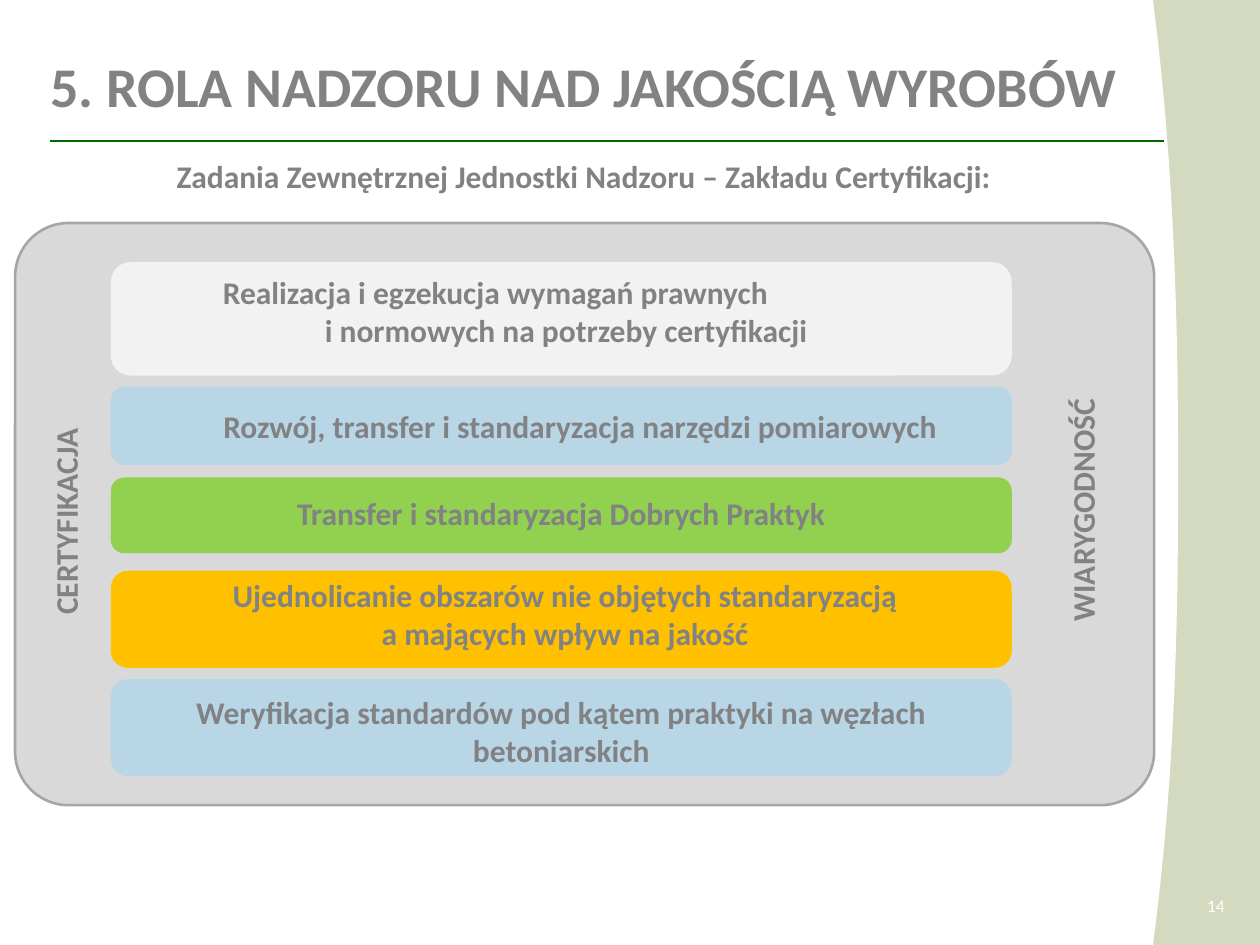
import dataclasses

import lxml.etree
import pptx
import pptx.dml.color
import pptx.enum.shapes
import pptx.enum.text
import pptx.oxml.ns
import pptx.util

Inches = pptx.util.Inches
Pt = pptx.util.Pt
ALIGN = pptx.enum.text.PP_ALIGN


@dataclasses.dataclass(frozen=True)
class Theme:
    font: str = "Calibri"
    title_size: int = 32
    body_size: int = 18
    number_size: int = 10
    text: str = "818284"
    white: str = "FFFFFF"
    edge: str = "D4DABF"
    rule: str = "006600"
    panel: str = "D9D9D9"
    panel_line: str = "A6A6A6"
    gray: str = "F2F2F2"
    blue: str = "B9D6E7"
    green: str = "92D050"
    orange: str = "FFC000"


def rgb(value):
    return pptx.dml.color.RGBColor.from_string(value)


def cubic(p0, p1, p2, p3, steps=24):
    """Return points along a Bezier curve, without its start point."""
    points = []
    for i in range(1, steps + 1):
        t = i / steps
        weights = ((1 - t) ** 3, 3 * t * (1 - t) ** 2, 3 * t * t * (1 - t), t ** 3)
        points.append(tuple(sum(w * p[axis] for w, p in zip(weights, (p0, p1, p2, p3)))
                            for axis in (0, 1)))
    return points


class SlideBuilder:
    def __init__(self, prs, theme):
        self.theme = theme
        self.s = prs.slides.add_slide(prs.slide_layouts[5])

    def background(self, color):
        fill = self.s.background.fill
        fill.solid()
        fill.fore_color.rgb = rgb(color)

    def outline(self, points, color):
        builder = self.s.shapes.build_freeform(
            Inches(points[0][0]), Inches(points[0][1]))
        builder.add_line_segments([(Inches(x), Inches(y)) for x, y in points[1:]])
        sp = builder.convert_to_shape()
        self.paint(sp, color)

    def paint(self, sp, fill, line=None):
        sp.shadow.inherit = False
        sp.fill.solid()
        sp.fill.fore_color.rgb = rgb(fill)
        if line:
            sp.line.color.rgb = rgb(line)
            sp.line.width = Pt(1.5)
        else:
            sp.line.fill.background()

    def rounded(self, box, fill, line, corner=0.167):
        sp = self.s.shapes.add_shape(
            pptx.enum.shapes.MSO_SHAPE.ROUNDED_RECTANGLE, *map(Inches, box))
        sp.adjustments[0] = corner
        self.paint(sp, fill, line)

    def rule(self, x1, x2, y, color):
        line = self.s.shapes.add_connector(
            pptx.enum.shapes.MSO_CONNECTOR.STRAIGHT,
            Inches(x1), Inches(y), Inches(x2), Inches(y))
        line.line.color.rgb = rgb(color)
        line.line.width = Pt(1)
        props = line.element.find(pptx.oxml.ns.qn("p:spPr"))
        lxml.etree.SubElement(props, pptx.oxml.ns.qn("a:effectLst"))

    def set_text(self, tf, lines, size, color, bold, align, spacing=None, indents=()):
        for i, line in enumerate(lines):
            p = tf.paragraphs[0] if i == 0 else tf.add_paragraph()
            p.text = line
            p.alignment = align
            p.space_before = Pt(0)
            if spacing:
                p.line_spacing = spacing
            if indents:
                p._p.get_or_add_pPr().set("marL", str(Inches(indents[i])))
            p.font.name = self.theme.font
            p.font.size = Pt(size)
            p.font.bold = bold
            p.font.color.rgb = rgb(color)

    def no_margins(self, tf):
        tf.margin_left = tf.margin_right = tf.margin_top = tf.margin_bottom = 0

    def title(self, box, text):
        sp = self.s.shapes.title
        sp.left, sp.top, sp.width, sp.height = map(Inches, box)
        sp.element.getparent().append(sp.element)  # bring in front of the white area
        tf = sp.text_frame
        self.no_margins(tf)
        tf.word_wrap = True
        tf.auto_size = pptx.enum.text.MSO_AUTO_SIZE.NONE
        tf.vertical_anchor = pptx.enum.text.MSO_ANCHOR.TOP
        self.set_text(tf, [text], self.theme.title_size, self.theme.text, True,
                      ALIGN.LEFT, spacing=0.8)

    def label(self, box, *lines, rotation=0, indents=()):
        """Add bold text, centred unless each line has its own left indent."""
        sp = self.s.shapes.add_textbox(*map(Inches, box))
        sp.rotation = rotation
        sp.text_frame.word_wrap = True
        self.set_text(sp.text_frame, lines, self.theme.body_size, self.theme.text, True,
                      ALIGN.LEFT if indents else ALIGN.CENTER, indents=indents)

    def page_number(self, box, number):
        sp = self.s.shapes.add_textbox(*map(Inches, box))
        self.no_margins(sp.text_frame)
        sp.text_frame.word_wrap = False
        self.set_text(sp.text_frame, [number], self.theme.number_size, self.theme.white,
                      False, ALIGN.RIGHT, spacing=0.9)


def main():
    prs = pptx.Presentation()
    prs.slide_width, prs.slide_height = Inches(10), Inches(7.5)
    theme = Theme()
    b = SlideBuilder(prs, theme)

    b.background(theme.edge)
    top, middle, bottom = (9.15, 0), (9.35, 3.72), (9.15, 7.5)
    b.outline([(0, 0), top,
               *cubic(top, (9.34, 1.45), (9.35, 2.89), middle),
               *cubic(middle, (9.35, 4.55), (9.35, 6.02), bottom),
               (0, 7.5)], theme.white)
    b.title((0.4, 0.51, 8.76, 0.44), "5. ROLA NADZORU NAD JAKOŚCIĄ WYROBÓW")
    b.rule(0.4, 9.24, 1.12, theme.rule)
    b.label((0.4, 1.2, 8.47, 0.4),
            "Zadania Zewnętrznej Jednostki Nadzoru – Zakładu Certyfikacji:")

    b.rounded((0.12, 1.77, 9.04, 4.62), theme.panel, theme.panel_line, corner=0.092)
    # bar top, bar height, colour, text box, lines, left indents
    tasks = [
        (2.09, 0.88, theme.gray, (1.57, 2.12, 5.87, 0.71),
         ["Realizacja i egzekucja wymagań prawnych",
          "i normowych na potrzeby certyfikacji"], (0.1, 0.91)),
        (3.08, 0.6, theme.blue, (1.11, 3.18, 6.99, 0.4),
         ["Rozwój, transfer i standaryzacja narzędzi pomiarowych"], ()),
        (3.8, 0.58, theme.green, (1.52, 3.87, 5.87, 0.4),
         ["Transfer i standaryzacja Dobrych Praktyk"], ()),
        (4.54, 0.75, theme.orange, (1.55, 4.52, 5.87, 0.71),
         ["Ujednolicanie obszarów nie objętych standaryzacją",
          "a mających wpływ na jakość"], ()),
        (5.4, 0.75, theme.blue, (0.89, 5.45, 7.13, 0.71),
         ["Weryfikacja standardów pod kątem praktyki na węzłach betoniarskich"], ()),
    ]
    for y, height, color, box, lines, indents in tasks:
        b.rounded((0.89, y, 7.13, height), color, color)
        b.label(box, *lines, indents=indents)

    b.label((-1.98, 3.94, 5, 0.4), "CERTYFIKACJA", rotation=270)
    b.label((6.09, 3.85, 5, 0.4), "WIARYGODNOŚĆ", rotation=270)
    b.page_number((9.48, 7.12, 0.24, 0.15), "14")

    prs.save("out.pptx")


if __name__ == "__main__":
    main()
